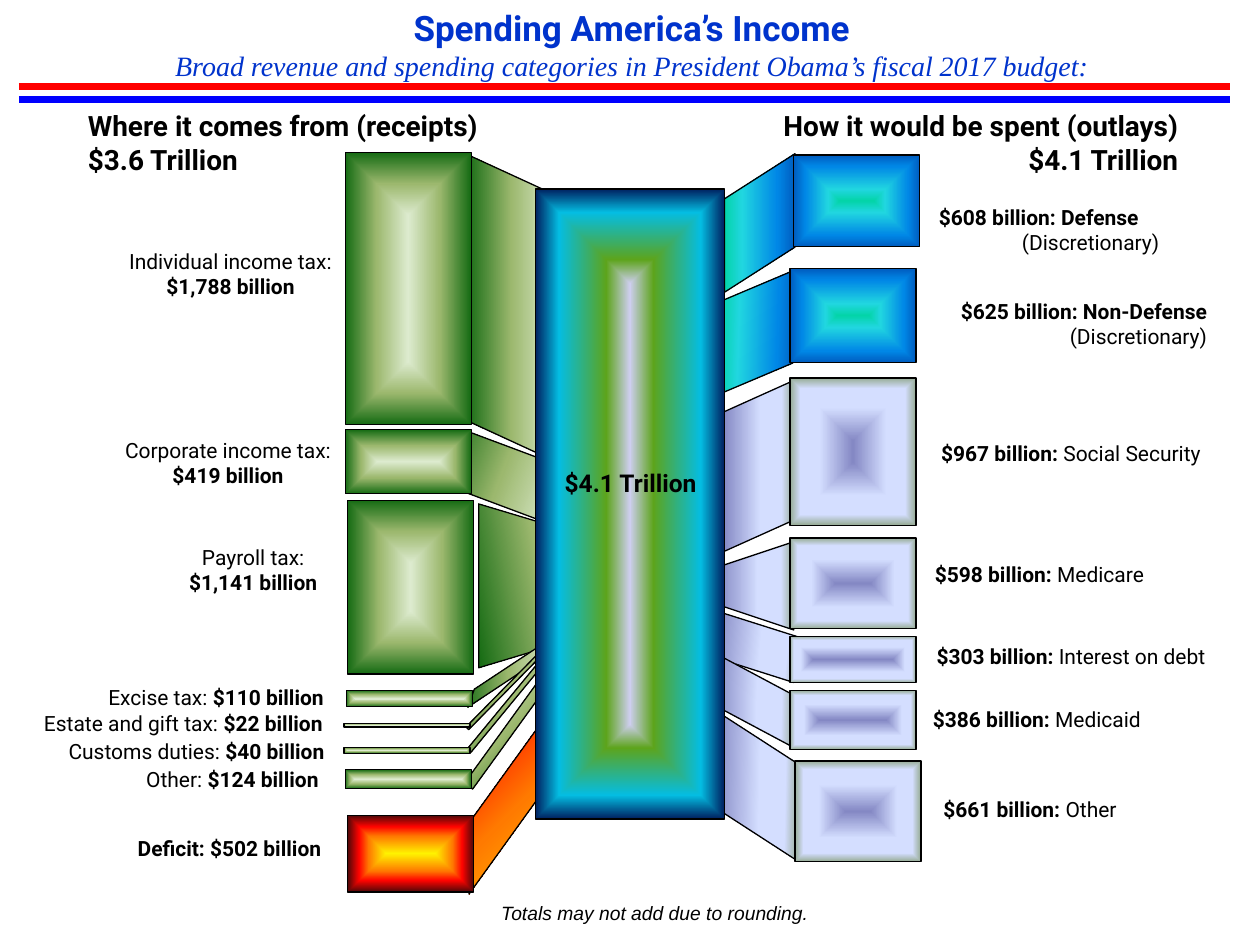
from dataclasses import dataclass

from lxml import etree
from pptx import Presentation
from pptx import util as u
from pptx.dml.color import RGBColor
from pptx.enum import shapes, text
from pptx.oxml.ns import nsdecls, qn

COLS, ROWS = 100, 75
CELL = u.Inches(10) // COLS
LEFT, MID, RIGHT = text.PP_ALIGN.LEFT, text.PP_ALIGN.CENTER, text.PP_ALIGN.RIGHT
KIND = shapes.MSO_SHAPE

Stops = tuple[tuple[int, str], ...]


@dataclass(frozen=True)
class Theme:
    ink: str = "000000"
    title: str = "0033CC"
    red: str = "FF0000"
    blue: str = "0000FF"
    sans: str = "Roboto"
    serif: str = "Times New Roman"
    plain: str = "Arial"
    big: int = 20
    head: int = 16
    total: int = 14
    body: int = 12
    note: int = 11
    edge: float = 0.75
    rule: float = 4
    green: Stops = ((0, "DDEBCF"), (50, "9CB86E"), (100, "156B13"))
    fire: Stops = ((0, "FFF200"), (45, "FF7A00"), (70, "FF0300"), (100, "4D0808"))
    sea: Stops = ((0, "03D4A8"), (25, "21D6E0"), (75, "0087E6"), (100, "005CBF"))
    lilac: Stops = ((0, "8488C4"), (53, "D4DEFF"), (83, "D4DEFF"), (100, "96AB94"))
    core: Stops = ((0, "CECEEF"), (25, "5DA41C"), (75, "04BDE2"), (100, "002060"))


T = Theme()


@dataclass(frozen=True)
class Block:
    x: float
    y: float
    h: float
    stops: Stops
    w: float = 10


@dataclass(frozen=True)
class Flow:
    x: float
    y: float
    w: float
    h: float
    turn: float
    skew: float | None
    stops: Stops
    angle: int | None
    flip: bool = False


@dataclass(frozen=True)
class Fan:
    points: tuple[tuple[float, float], ...]
    stops: Stops
    angle: int


@dataclass(frozen=True)
class Label:
    x: float
    y: float
    w: float
    h: float
    lines: tuple[str, ...]
    size: int = T.body
    align: int = MID
    wrap: bool = False


FLOWS = (
    Flow(30.7, 58.2, 25, 3.3, 305.8, 1.37, T.fire, None),
    Flow(36, 35.4, 7.6, 4.6, 20.5, None, T.green, 180),
    Fan(((62.7, 43.1), (56.7, 44.7), (56.7, 47.9), (62.7, 49.5)), T.lilac, 0),
    Flow(54.8, 14.9, 11, 5.6, 90, 0.64, T.sea, 90, True),
    Flow(55.2, 23.5, 10, 5.6, 91.8, 0.46, T.sea, 90, True),
    Flow(53.4, 34.2, 13.6, 5.6, 90, 0.45, T.lilac, 90, True),
    Flow(57.7, 48.3, 4.9, 6.2, 96, 0.26, T.lilac, 270),
    Flow(56.3, 52.5, 7.2, 6.2, 91.5, 0.5, T.lilac, 270),
    Flow(54.3, 59.2, 11.6, 6.4, 91.1, 0.62, T.lilac, 270),
    Flow(28.4, 20.9, 24.4, 7.1, 90, 0.46, T.green, 90),
    Fan(((37.6, 53.3), (47.6, 49.9), (47.6, 43.2), (37.6, 39.8)), T.green, 170),
    Flow(36.2, 53, 8.3, 0.9, 326.5, 1.34, T.green, 210),
    Flow(35.9, 54.8, 8, 0.3, 314.5, 0, T.green, 100),
    Flow(35.6, 55.9, 9, 0.4, 309.5, 0, T.green, 100),
    Flow(35.1, 57.9, 10.1, 0.8, 305.9, 0, T.green, 100),
)

BLOCKS = (
    Block(63, 12.3, 7.3, T.sea),
    Block(62.7, 21.3, 7.5, T.sea),
    Block(62.7, 30, 11.7, T.lilac),
    Block(62.7, 42.7, 7.2, T.lilac),
    Block(62.7, 50.5, 3.7, T.lilac),
    Block(62.7, 54.8, 4.7, T.lilac),
    Block(63.1, 60.4, 8, T.lilac),
    Block(27.4, 12.1, 21.6, T.green),
    Block(27.4, 34.1, 5.1, T.green),
    Block(27.6, 39.7, 13.8, T.green),
    Block(27.5, 54.8, 1.3, T.green),
    Block(27.3, 57.4, 0.3, T.green),
    Block(27.3, 59.3, 0.5, T.green),
    Block(27.4, 61.1, 1.5, T.green),
    Block(27.6, 64.7, 6.1, T.fire),
    Block(42.5, 15, 50, T.core, 15),
)

LABELS = (
    Label(6, 8.1, 37, 6.4, ("*Where it comes from (receipts)*", "*$3.6 Trillion*"), T.head, LEFT),
    Label(56.6, 8.1, 37.9, 6.4, ("*How it would be spent (outlays)*", "*$4.1 Trillion*"), T.head, RIGHT),
    Label(9.1, 19.2, 18.4, 5, ("Individual income tax:", "*$1,788 billion*")),
    Label(8.9, 34.2, 18.4, 5, ("Corporate income tax:", "*$419 billion*")),
    Label(13.3, 42.7, 13.6, 5, ("Payroll tax:", "*$1,141 billion*")),
    Label(6.9, 53.8, 20.5, 3, ("Excise tax: *$110 billion*",)),
    Label(1.7, 55.9, 25.7, 3, ("Estate and gift tax: *$22 billion*",)),
    Label(3.9, 58.1, 23.4, 3, ("Customs duties: *$40 billion*",)),
    Label(9.8, 60.3, 17.3, 3, ("Other: *$124 billion*",)),
    Label(7.9, 65.8, 18.6, 3, ("*Deficit: $502 billion*",), align=RIGHT),
    Label(72.5, 23.2, 24.3, 5, ("*$625 billion: Non-Defense*", "(Discretionary)"), align=RIGHT, wrap=True),
    Label(73.1, 34.5, 23.8, 3, ("*$967 billion:* Social Security",)),
    Label(72.6, 44.1, 19.8, 3, ("*$598 billion:* Medicare",)),
    Label(72.4, 50.6, 25.2, 3, ("*$303 billion:* Interest on debt",)),
    Label(72.5, 55.6, 19.6, 3, ("*$386 billion:* Medicaid",)),
    Label(73.1, 62.7, 17.3, 3, ("*$661 billion:* Other",)),
    Label(43.1, 36.6, 13.9, 3.4, ("*$4.1 Trillion*",), T.total),
)


def grid(*cells: float) -> list[int]:
    return [round(cell * CELL) for cell in cells]


def paint(shape, stops: Stops, angle: int | None = None, focus: str = "") -> None:
    shape.shadow.inherit = False
    shape.line.color.rgb = RGBColor.from_string(T.ink)
    shape.line.width = u.Pt(T.edge)
    shape.fill.background()
    marks = "".join(
        f'<a:gs pos="{spot * 1000}"><a:srgbClr val="{tone}"/></a:gs>' for spot, tone in stops
    )
    shade = focus if angle is None else f'<a:lin ang="{angle * 60000}" scaled="0"/>'
    fill = etree.fromstring(
        f'<a:gradFill {nsdecls("a")} rotWithShape="1"><a:gsLst>{marks}</a:gsLst>{shade}</a:gradFill>'
    )
    props = shape._element.spPr
    props.replace(props.find(qn("a:noFill")), fill)


def draw_block(slide, block: Block) -> None:
    shape = slide.shapes.add_shape(KIND.RECTANGLE, *grid(block.x, block.y, block.w, block.h))
    paint(shape, block.stops, focus='<a:path path="shape"><a:fillToRect '
          'l="50000" t="50000" r="50000" b="50000"/></a:path>')


def draw_flow(slide, flow: Flow) -> None:
    kind = KIND.RECTANGLE if flow.skew is None else KIND.PARALLELOGRAM
    shape = slide.shapes.add_shape(kind, *grid(flow.x, flow.y, flow.w, flow.h))
    if flow.skew is not None:
        shape.adjustments[0] = flow.skew
    shape.rotation = flow.turn
    if flow.flip:
        shape._element.spPr.find(qn("a:xfrm")).set("flipV", "1")
    paint(shape, flow.stops, flow.angle,
          '<a:path path="circle"><a:fillToRect l="100000" t="100000"/></a:path>')


def draw_fan(slide, fan: Fan) -> None:
    start, *rest = fan.points
    form = slide.shapes.build_freeform(*start, scale=CELL)
    form.add_line_segments(rest, close=True)
    paint(form.convert_to_shape(), fan.stops, fan.angle)


def draw_rule(slide, row: float, tone: str) -> None:
    line = slide.shapes.add_connector(shapes.MSO_CONNECTOR.STRAIGHT, *grid(1.5, row, 97.6, row))
    line.line.color.rgb = RGBColor.from_string(tone)
    line.line.width = u.Pt(T.rule)
    etree.SubElement(line._element.spPr, qn("a:effectLst"))


def style(run, size: int, face: str = T.sans, tone: str = T.ink,
          bold: bool = False, slant: bool = False) -> None:
    font = run.font
    font.size, font.name, font.bold, font.italic = u.Pt(size), face, bold, slant
    font.color.rgb = RGBColor.from_string(tone)


def draw_label(slide, label: Label):
    frame = slide.shapes.add_textbox(*grid(label.x, label.y, label.w, label.h)).text_frame
    frame.word_wrap = label.wrap
    frame.auto_size = text.MSO_AUTO_SIZE.SHAPE_TO_FIT_TEXT
    frame.vertical_anchor = text.MSO_ANCHOR.MIDDLE
    frame.text = "\n".join(label.lines)
    for para, line in zip(frame.paragraphs, label.lines):
        para.text = ""
        para.alignment = label.align
        for spot, part in enumerate(line.split("*")):
            if part:
                run = para.add_run()
                run.text = part
                style(run, label.size, bold=spot % 2 == 1)
    return frame


def main() -> None:
    deck = Presentation()
    deck.slide_width, deck.slide_height = grid(COLS, ROWS)
    slide = deck.slides.add_slide(deck.slide_layouts[6])
    for flow in FLOWS:
        (draw_fan if isinstance(flow, Fan) else draw_flow)(slide, flow)
    for block in BLOCKS:
        draw_block(slide, block)
    title = draw_label(slide, Label(11.8, 0, 76.7, 7.1, (
        "Spending America’s Income",
        "Broad revenue and spending categories in President Obama’s fiscal 2017 budget:")))
    top, sub = title.paragraphs
    style(top.runs[0], T.big, tone=T.title, bold=True)
    style(sub.runs[0], T.head, T.serif, T.title, slant=True)
    for label in LABELS:
        draw_label(slide, label)
    arms = draw_label(slide, Label(71.9, 15.7, 21.1, 5, ("*$608 billion: Defense*", "(Discretionary)")))
    arms.paragraphs[1].alignment = RIGHT
    draw_rule(slide, 7.9, T.blue)
    draw_rule(slide, 6.9, T.red)
    note = draw_label(slide, Label(38.8, 71, 26.7, 2.9, ("Totals may not add due to rounding.",), align=LEFT))
    note.vertical_anchor = text.MSO_ANCHOR.TOP
    style(note.paragraphs[0].runs[0], T.note, T.plain, slant=True)
    deck.save("out.pptx")


if __name__ == "__main__":
    main()
